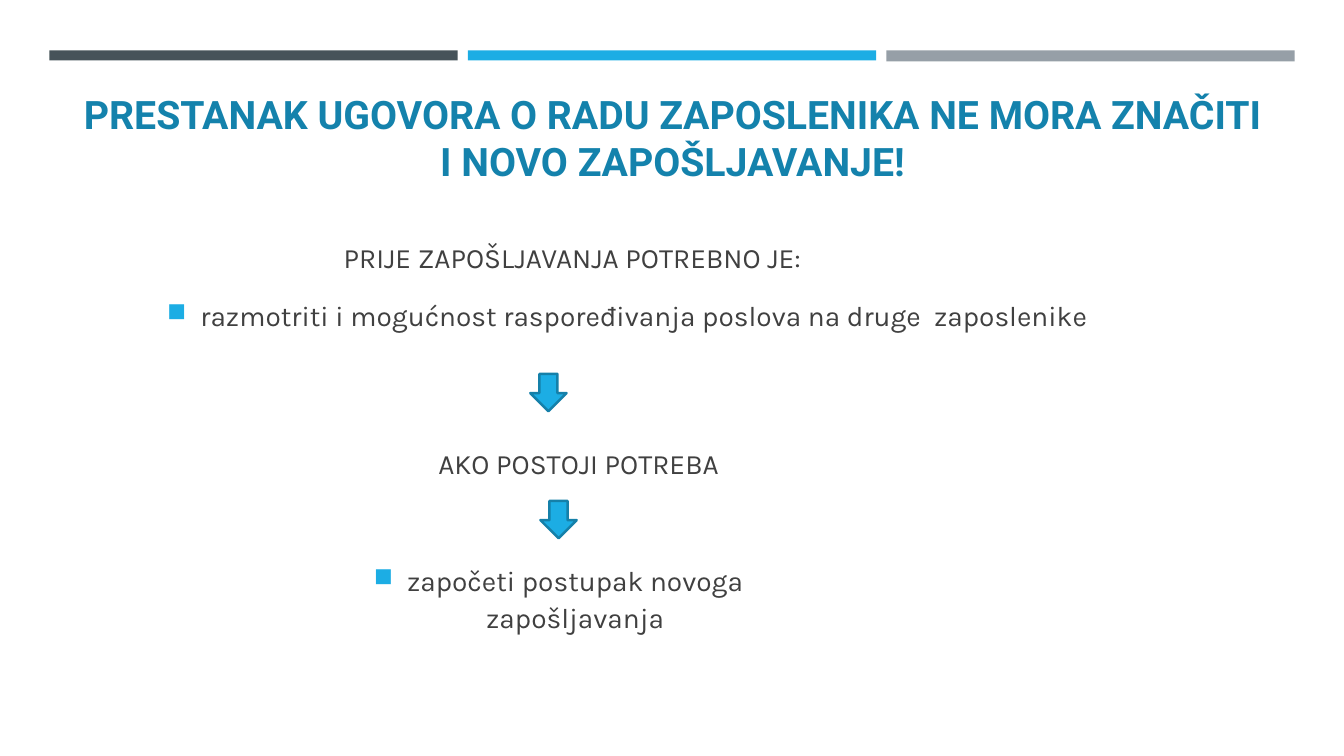
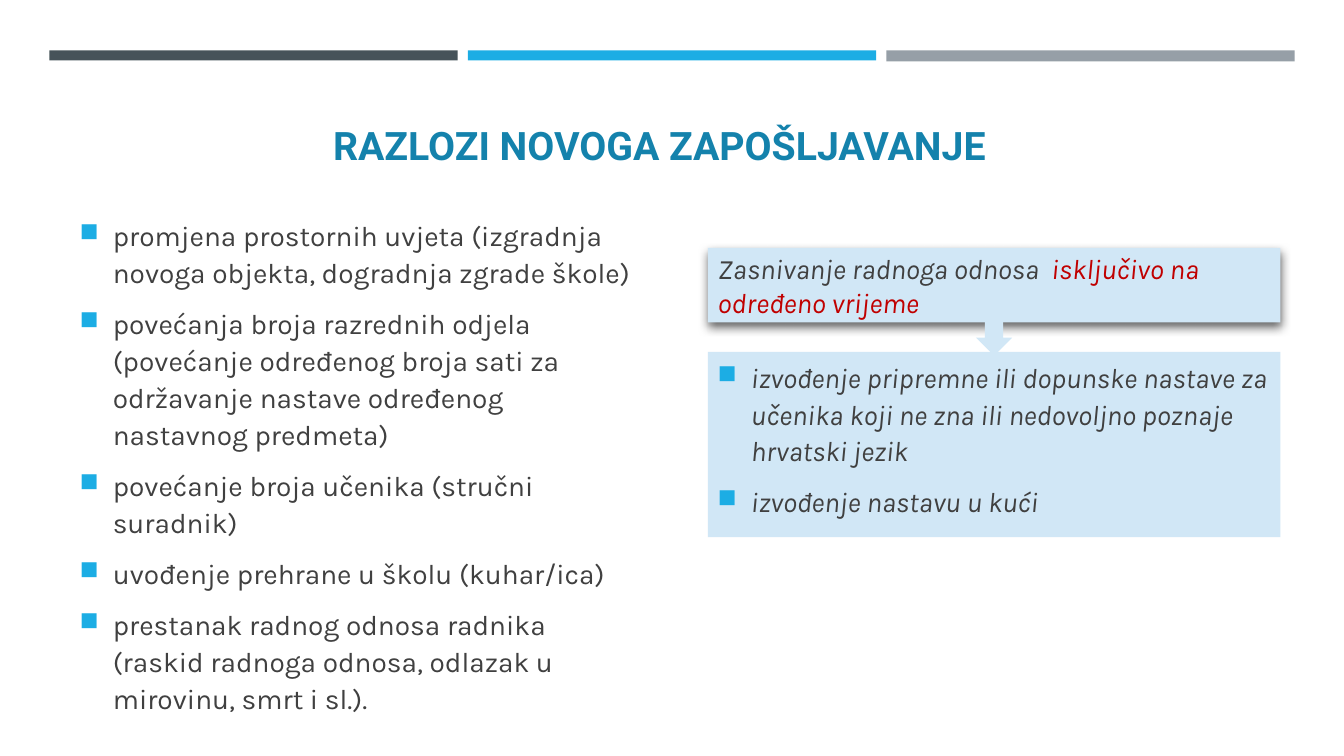
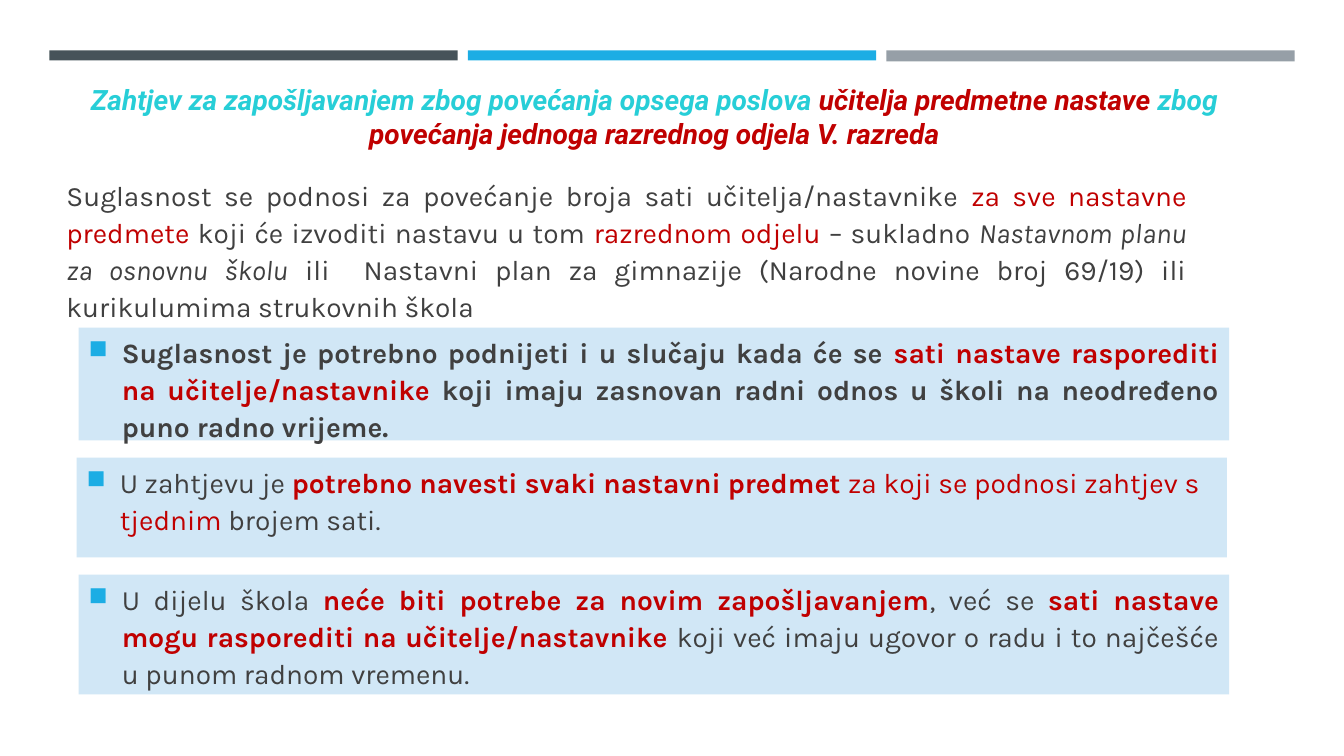
from dataclasses import dataclass
from typing import Optional

import pptx
import pptx.dml.color
import pptx.enum.shapes
import pptx.enum.text
import pptx.oxml
import pptx.oxml.ns
import pptx.util
from lxml import etree

RGB = pptx.dml.color.RGBColor
SHAPE = pptx.enum.shapes.MSO_SHAPE
ALIGN = pptx.enum.text.PP_ALIGN
ANCHOR = pptx.enum.text.MSO_ANCHOR
Pt = pptx.util.Pt

SLATE = RGB(0x46, 0x53, 0x59)
SKY = RGB(0x1C, 0xAD, 0xE4)
GREY = RGB(0x96, 0x9F, 0xA7)
TITLE_BLUE = RGB(0x14, 0x82, 0xAC)
ARROW_EDGE = RGB(0x15, 0x80, 0xA9)
PALE_BLUE = RGB(0xD1, 0xE7, 0xF6)
TURQUOISE = RGB(0x27, 0xCE, 0xD7)
INK = RGB(0x40, 0x40, 0x40)
RED = RGB(0xC0, 0x00, 0x00)

TITLE_FONT, BODY_FONT = "Roboto", "Karla"
EMU_PER_PX = 9144
INDENT = 33
BAR_LEFT, BAR_TOP, BAR_WIDTH, BAR_STEP = 49, 50, 405, 415
ARROW_WIDTH, ARROW_HEIGHT = 36, 37


@dataclass(frozen=True)
class Span:
    text: str
    color: RGB = INK
    bold: bool = False
    italic: bool = False


@dataclass(frozen=True)
class Area:
    left: int
    top: int
    width: int
    height: int


@dataclass(frozen=True)
class Style:
    font: str = BODY_FONT
    size: int = 20
    align: Optional[ALIGN] = None
    anchor: ANCHOR = ANCHOR.TOP
    bullet: bool = False
    line_spacing: float = 1.0
    before: int = 4
    after: int = 6


@dataclass(frozen=True)
class Block:
    area: Area
    paragraphs: list[list[Span]]
    style: Style
    fill: Optional[RGB] = None
    shadow: bool = False


@dataclass(frozen=True)
class Arrow:
    left: int
    top: int
    fill: RGB = SKY
    edge: Optional[RGB] = ARROW_EDGE


TITLE = Style(TITLE_FONT, 28, ALIGN.CENTER, ANCHOR.BOTTOM, before=0, after=0)
SUBTITLE = Style(TITLE_FONT, 20, ALIGN.CENTER, ANCHOR.MIDDLE, before=0, after=0)
LABEL = Style(anchor=ANCHOR.MIDDLE)
CENTERED_LABEL = Style(align=ALIGN.CENTER, anchor=ANCHOR.MIDDLE)
INTRO = Style(align=ALIGN.JUSTIFY, anchor=ANCHOR.MIDDLE, line_spacing=1.1)
BULLETS = Style(bullet=True, line_spacing=1.1)
CENTERED_BULLETS = Style(align=ALIGN.CENTER, bullet=True, line_spacing=1.1)
JUSTIFIED_BULLETS = Style(align=ALIGN.JUSTIFY, bullet=True, line_spacing=1.1)


def px(length: int) -> pptx.util.Emu:
    return pptx.util.Emu(length * EMU_PER_PX)


def add_xml(parent: etree._Element, markup: str) -> None:
    """Append DrawingML markup, adding the namespace to its first tag."""
    head, rest = markup.split(" ", 1)
    namespace = pptx.oxml.ns.nsdecls("a")
    parent.append(pptx.oxml.parse_xml(f"{head} {namespace} {rest}"))


def add_filled(page, kind: SHAPE, area: Area, fill: RGB, edge: Optional[RGB] = None):
    shape = page.shapes.add_shape(
        kind, px(area.left), px(area.top), px(area.width), px(area.height))
    shape.shadow.inherit = False
    shape.fill.solid()
    shape.fill.fore_color.rgb = fill
    if edge is None:
        shape.line.fill.background()
    else:
        shape.line.color.rgb = edge
        shape.line.width = Pt(1.75)
    return shape


def set_bullet(paragraph) -> None:
    properties = paragraph._p.get_or_add_pPr()
    properties.set("marL", str(px(INDENT)))
    properties.set("indent", str(-px(INDENT)))
    add_xml(properties, f'<a:buClr ><a:srgbClr val="{SKY}"/></a:buClr>')
    add_xml(properties, '<a:buSzPct val="92000"/>')
    add_xml(properties, '<a:buChar char="■"/>')


def set_shadow(shape) -> None:
    effects = shape._element.spPr.find(pptx.oxml.ns.qn("a:effectLst"))
    add_xml(effects, f'<a:outerShdw blurRad="{Pt(7)}" dist="{Pt(3)}" dir="{84 * 60000}" '
                     'rotWithShape="0"><a:srgbClr val="000000"><a:alpha val="60000"/>'
                     '</a:srgbClr></a:outerShdw>')


def write_paragraph(paragraph, spans: list[Span], style: Style) -> None:
    paragraph.alignment = style.align or ALIGN.LEFT
    paragraph.line_spacing = style.line_spacing
    paragraph.space_before = Pt(style.before)
    paragraph.space_after = Pt(style.after)
    if style.bullet:
        set_bullet(paragraph)
    for span in spans:
        run = paragraph.add_run()
        run.text = span.text
        run.font.name = style.font
        run.font.size = Pt(style.size)
        run.font.bold = span.bold
        run.font.italic = span.italic
        run.font.color.rgb = span.color


def add_block(page, block: Block) -> None:
    area = block.area
    if block.fill is None:
        box = page.shapes.add_textbox(
            px(area.left), px(area.top), px(area.width), px(area.height))
    else:
        box = add_filled(page, SHAPE.RECTANGLE, area, block.fill)
    if block.shadow:
        set_shadow(box)
    frame = box.text_frame
    frame.word_wrap = True
    frame.vertical_anchor = block.style.anchor
    for index, spans in enumerate(block.paragraphs):
        paragraph = frame.add_paragraph() if index else frame.paragraphs[0]
        write_paragraph(paragraph, spans, block.style)


def add_arrow(page, arrow: Arrow) -> None:
    area = Area(arrow.left, arrow.top, ARROW_WIDTH, ARROW_HEIGHT)
    add_filled(page, SHAPE.DOWN_ARROW, area, arrow.fill, arrow.edge)


def add_page(deck, blocks: list[Block], arrows: list[Arrow]) -> None:
    page = deck.slides.add_slide(deck.slide_layouts[6])
    for index, (color, height) in enumerate([(SLATE, 10), (SKY, 10), (GREY, 11)]):
        area = Area(BAR_LEFT + index * BAR_STEP, BAR_TOP, BAR_WIDTH, height)
        add_filled(page, SHAPE.RECTANGLE, area, color)
    for block in blocks:
        add_block(page, block)
    for arrow in arrows:
        add_arrow(page, arrow)


def title(left: int, top: int, text: str) -> Block:
    return Block(Area(left, top, 1206, 108), [[Span(text, TITLE_BLUE, bold=True)]], TITLE)


NEED_BLOCKS = [
    title(64, 80, "PRESTANAK UGOVORA O RADU ZAPOSLENIKA NE MORA ZNAČITI "
                  "I NOVO ZAPOŠLJAVANJE!"),
    Block(Area(331, 225, 568, 61), [[Span("PRIJE ZAPOŠLJAVANJA POTREBNO JE:")]], LABEL),
    Block(Area(156, 288, 998, 97),
          [[Span("razmotriti i mogućnost raspoređivanja poslova na druge  zaposlenike")]],
          BULLETS),
    Block(Area(290, 429, 568, 61), [[Span("AKO POSTOJI POTREBA")]], CENTERED_LABEL),
    Block(Area(270, 551, 568, 97), [[Span("započeti postupak novoga zapošljavanja")]],
          CENTERED_BULLETS),
]

REASONS = [
    "promjena prostornih uvjeta (izgradnja novoga objekta, dogradnja zgrade škole)",
    "povećanja broja razrednih odjela (povećanje određenog broja sati za "
    "održavanje nastave određenog nastavnog predmeta)",
    "povećanje broja učenika (stručni suradnik)",
    "uvođenje prehrane u školu (kuhar/ica)",
    "prestanak radnog odnosa radnika (raskid radnoga odnosa, odlazak u mirovinu, "
    "smrt i sl.).",
]
FIXED_TERM_CASES = [
    "izvođenje pripremne ili dopunske nastave za učenika koji ne zna ili nedovoljno "
    "poznaje hrvatski jezik",
    "izvođenje nastavu u kući",
]
REASON_BLOCKS = [
    title(51, 64, "RAZLOZI NOVOGA ZAPOŠLJAVANJE"),
    Block(Area(69, 209, 568, 420), [[Span(text)] for text in REASONS], BULLETS),
    Block(Area(702, 246, 568, 74),
          [[Span("Zasnivanje radnoga odnosa  ", italic=True),
            Span("isključivo na određeno vrijeme", RED, italic=True)]],
          LABEL, PALE_BLUE, shadow=True),
    Block(Area(702, 349, 568, 184),
          [[Span(text, italic=True)] for text in FIXED_TERM_CASES], BULLETS, PALE_BLUE),
]

REQUEST_BLOCKS = [
    Block(Area(56, 217, 1131, 60),
          [[Span("Suglasnost se podnosi za povećanje broja sati učitelja/nastavnike "),
            Span("za sve nastavne predmete ", RED),
            Span("koji će izvoditi nastavu u tom "),
            Span("razrednom odjelu", RED),
            Span(" – sukladno "),
            Span("Nastavnom planu za osnovnu školu", italic=True),
            Span(" ili  Nastavni plan za gimnazije (Narodne novine broj 69/19) ili "
                 "kurikulumima strukovnih škola")]], INTRO),
    Block(Area(78, 325, 1141, 112),
          [[Span("Suglasnost je potrebno podnijeti i u slučaju kada će se ", bold=True),
            Span("sati nastave rasporediti na učitelje/nastavnike ", RED, bold=True),
            Span("koji imaju zasnovan radni odnos u školi na neodređeno puno radno "
                 "vrijeme.", bold=True)]], JUSTIFIED_BULLETS, PALE_BLUE),
    Block(Area(46, 78, 1206, 75),
          [[Span("Zahtjev za zapošljavanjem zbog povećanja opsega poslova ",
                 TURQUOISE, bold=True, italic=True),
            Span("učitelja predmetne nastave ", RED, bold=True, italic=True),
            Span("zbog ", TURQUOISE, bold=True, italic=True),
            Span("povećanja jednoga razrednog odjela V. razreda",
                 RED, bold=True, italic=True)]], SUBTITLE),
    Block(Area(76, 454, 1141, 99),
          [[Span("U zahtjevu je "),
            Span("potrebno navesti svaki nastavni predmet ", RED, bold=True),
            Span("za koji se podnosi zahtjev s tjednim ", RED),
            Span("brojem sati.")]], BULLETS, PALE_BLUE),
    Block(Area(78, 570, 1141, 119),
          [[Span("U dijelu škola "),
            Span("neće biti potrebe za novim zapošljavanjem", RED, bold=True),
            Span(", već se "),
            Span("sati nastave mogu rasporediti na učitelje/nastavnike ", RED, bold=True),
            Span("koji već imaju ugovor o radu i to najčešće u punom radnom vremenu.")]],
          JUSTIFIED_BULLETS, PALE_BLUE),
]


def main() -> None:
    deck = pptx.Presentation()
    deck.slide_width, deck.slide_height = px(1333), px(750)
    add_page(deck, NEED_BLOCKS, [Arrow(526, 371), Arrow(536, 497)])
    add_page(deck, REASON_BLOCKS, [Arrow(968, 316, PALE_BLUE, None)])
    add_page(deck, REQUEST_BLOCKS, [])
    deck.save("out.pptx")


if __name__ == "__main__":
    main()
